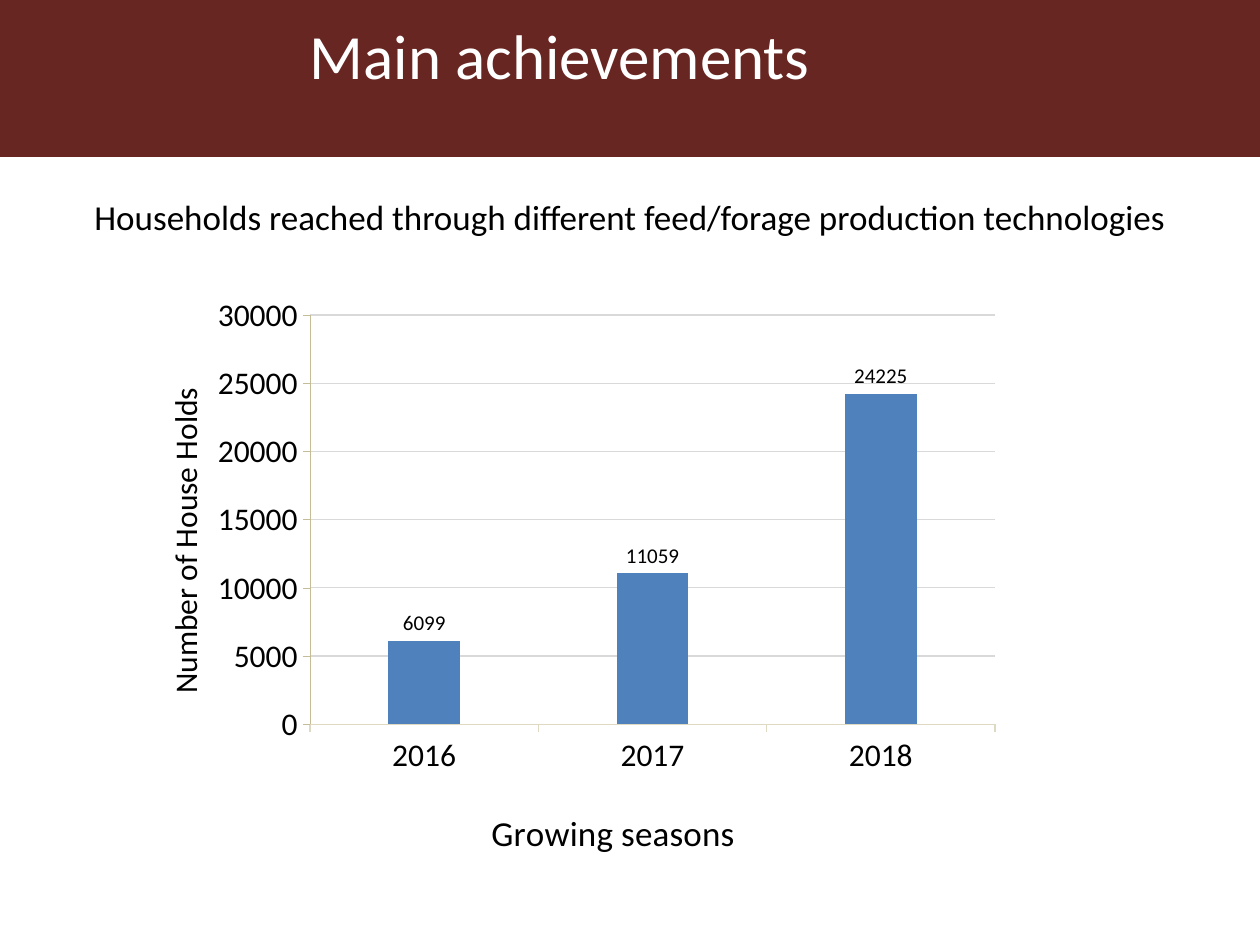
from lxml import etree
from pptx import Presentation
from pptx import util as u
from pptx.chart.data import CategoryChartData
from pptx.dml.color import RGBColor
from pptx.enum import chart as charts, shapes, text
from pptx.oxml import ns

PX = 914400 / 126
FONT = "Calibri"
CHART_BOX = (121, 284, 892, 588)


def px(*lengths):
    return [u.Emu(round(length * PX)) for length in lengths]


def color(value):
    return RGBColor.from_string(value)


def apply(target, values):
    for name, value in values.items():
        setattr(target, name, value)


def format_font(font, size, hex_color="000000"):
    apply(font, {"name": FONT, "size": u.Pt(size), "bold": False})
    font.color.rgb = color(hex_color)


def format_line(line, hex_color, width):
    line.color.rgb = color(hex_color)
    line.width = u.Pt(width)


def add_band(slide, box, fill):
    shape = slide.shapes.add_shape(shapes.MSO_SHAPE.RECTANGLE, *px(*box))
    shape.shadow.inherit = False
    shape.fill.solid()
    shape.fill.fore_color.rgb = color(fill)
    shape.line.fill.background()
    slide.shapes._spTree.insert(2, shape._element)


def fill_placeholder(placeholder, box, content, size, hex_color, spacing):
    apply(placeholder, dict(zip(("left", "top", "width", "height"), px(*box))))
    frame = placeholder.text_frame
    apply(frame, {"text": content, "word_wrap": True,
                  "auto_size": text.MSO_AUTO_SIZE.NONE,
                  "vertical_anchor": text.MSO_ANCHOR.TOP})
    paragraph = frame.paragraphs[0]
    apply(paragraph, {"alignment": text.PP_ALIGN.CENTER,
                      "space_before": u.Pt(0), **spacing})
    properties = paragraph._p.get_or_add_pPr()
    properties.set("marL", "0")
    properties.set("indent", "0")
    etree.SubElement(properties, ns.qn("a:buNone"))
    format_font(paragraph.runs[0].font, size, hex_color)


def set_layout(element, index, box, inner=False):
    for previous in element.findall(ns.qn("c:layout")):
        element.remove(previous)
    layout = etree.Element(ns.qn("c:layout"))
    element.insert(index, layout)
    manual = etree.SubElement(layout, ns.qn("c:manualLayout"))
    left, top, width, height = CHART_BOX
    values = {"xMode": "edge", "yMode": "edge",
              "x": round((box[0] - left) / width, 3),
              "y": round((box[1] - top) / height, 3)}
    if inner:
        values = {"layoutTarget": "inner", **values,
                  "w": round(box[2] / width, 3),
                  "h": round(box[3] / height, 3)}
    for name, value in values.items():
        etree.SubElement(manual, ns.qn(f"c:{name}")).set("val", str(value))


def format_axis(axis, title, title_size, title_position, line_color, line_width):
    axis.major_tick_mark = charts.XL_TICK_MARK.OUTSIDE
    axis.minor_tick_mark = charts.XL_TICK_MARK.NONE
    format_font(axis.tick_labels.font, 18)
    format_line(axis.format.line, line_color, line_width)
    frame = axis.axis_title.text_frame
    frame.text = title
    format_font(frame.paragraphs[0].runs[0].font, title_size)
    set_layout(axis.axis_title._element, 1, title_position)


def add_household_chart(slide):
    data = CategoryChartData()
    data.categories = ["2016", "2017", "2018"]
    data.add_series("Series 1", [6099, 11059, 24225])
    chart = slide.shapes.add_chart(
        charts.XL_CHART_TYPE.COLUMN_CLUSTERED, *px(*CHART_BOX), data).chart
    apply(chart, {"has_legend": False, "has_title": False})
    format_font(chart.font, 18)

    plot = chart.plots[0]
    apply(plot, {"gap_width": 219, "overlap": -27,
                 "vary_by_categories": False})
    series = plot.series[0]
    series.format.fill.solid()
    series.format.fill.fore_color.rgb = color("4F81BD")
    labels = series.data_labels
    apply(labels, {"show_value": True,
                   "position": charts.XL_LABEL_POSITION.OUTSIDE_END})
    format_font(labels.font, 12)

    format_axis(chart.category_axis, "Growing seasons", 20, (485, 802),
                "DDD9C3", 0.75)
    value_axis = chart.value_axis
    format_axis(value_axis, "Number of House Holds", 18, (158, 382),
                "C4BD97", 0.25)
    apply(value_axis, {"minimum_scale": 0, "maximum_scale": 30000,
                       "major_unit": 5000, "has_major_gridlines": True})
    format_line(value_axis.major_gridlines.format.line, "D9D9D9", 0.75)
    plot_area = chart._chartSpace.chart.plotArea
    set_layout(plot_area, 0, (310, 315, 685, 409), inner=True)


def main():
    presentation = Presentation()
    presentation.slide_width, presentation.slide_height = px(1260, 945)
    slide = presentation.slides.add_slide(presentation.slide_layouts[1])
    add_band(slide, (0, 0, 1260, 157), "682622")
    fill_placeholder(slide.shapes.title, (0, 10, 1134, 157),
                     "Main achievements ", 36, "FFFFFF", {})
    fill_placeholder(
        slide.placeholders[1], (63, 168, 1134, 630),
        "Households reached through different feed/forage production technologies",
        20, "000000", {"line_spacing": 1.5, "space_after": u.Pt(12)})
    add_household_chart(slide)
    presentation.save("out.pptx")


if __name__ == "__main__":
    main()
